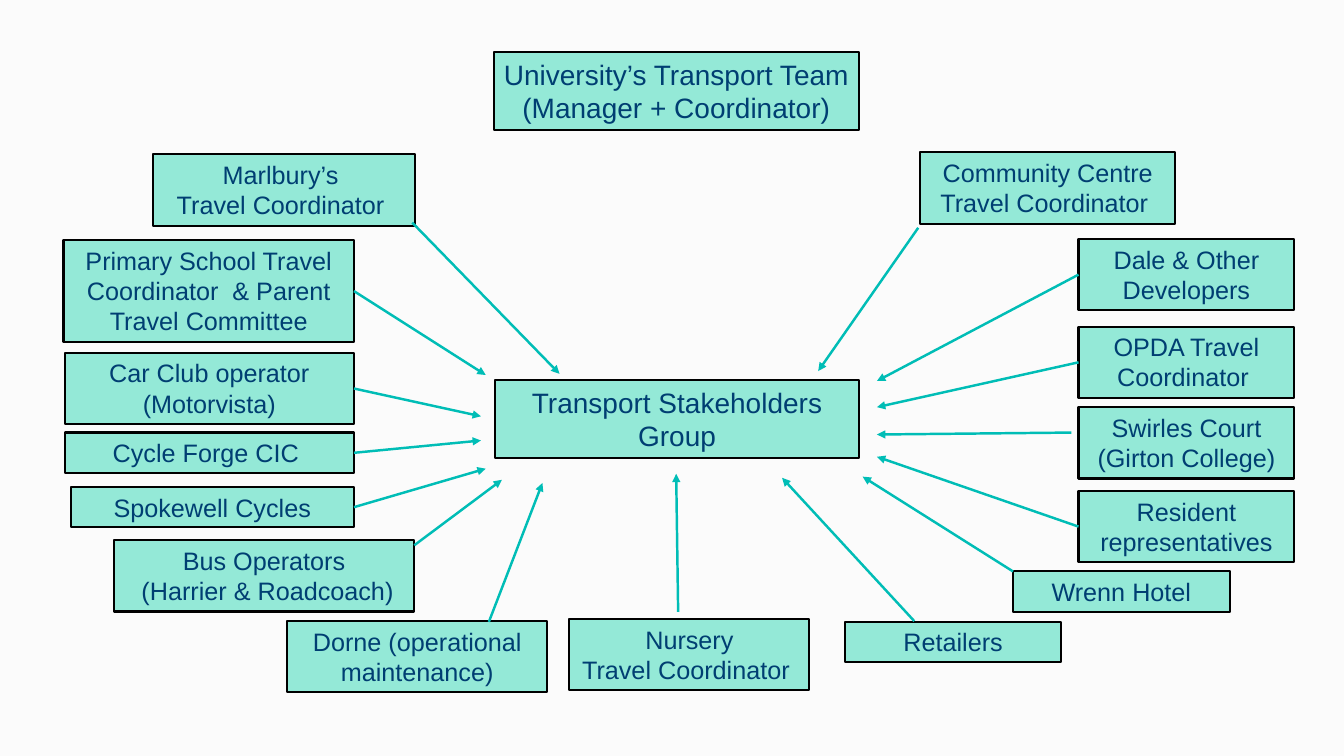
"""Build the transport stakeholders slide."""
from dataclasses import dataclass
from typing import Optional, Union

from lxml.etree import SubElement
from pptx import Presentation
from pptx.dml.color import RGBColor
from pptx.enum.shapes import MSO_CONNECTOR as Connector, MSO_SHAPE as Preset
from pptx.enum.text import MSO_ANCHOR as Anchor, MSO_AUTO_SIZE as AutoSize, PP_ALIGN as Align
from pptx.oxml.ns import qn
from pptx.shapes.autoshape import Shape
from pptx.slide import Slide
from pptx.util import Cm, Pt

PALE_GREY = RGBColor(0xFB, 0xFB, 0xFB)
MINT = RGBColor(0x94, 0xE9, 0xD7)
BLACK = RGBColor(0x00, 0x00, 0x00)
NAVY = RGBColor(0x00, 0x3E, 0x72)
TEAL = RGBColor(0x00, 0xBD, 0xB6)

FONT = "Arial"
SIDE_MARGIN = Cm(0.15)
ONE_LINE, TWO_LINES, THREE_LINES = 1.02, 1.8, 2.57
LEFT_SIDE, RIGHT_SIDE = 1, 3
DEVELOPER_LEFT, DEVELOPER_WIDTH = 27.18, 5.44
OPERATOR_LEFT, OPERATOR_WIDTH = 1.63, 7.29

Point = tuple[float, float]


@dataclass(frozen=True)
class Arrow:
    """An arrow from a side of its box, or from a point, to a point."""
    start: Union[int, Point]
    end: Point


@dataclass(frozen=True)
class Box:
    """A labelled box with its arrow, in centimetres."""
    text: str
    left: float
    top: float
    width: float
    height: float
    arrow: Optional[Arrow] = None
    size: int = 18


BOXES = [
    Box("University’s Transport Team (Manager + Coordinator)", 12.45, 1.32, 9.19, 1.96, size=20),
    Box("Transport Stakeholders Group", 12.47, 9.58, 9.19, 1.96, size=20),
    Box("Marlbury’s \nTravel Coordinator ", 3.86, 3.89, 6.6, TWO_LINES,
        Arrow((10.39, 5.61), (14.1, 9.42))),
    Box("Primary School Travel Coordinator  & Parent Travel Committee", 1.6, 6.05, 7.32,
        THREE_LINES, Arrow(RIGHT_SIDE, (12.24, 9.45))),
    Box("Car Club operator (Motorvista)", OPERATOR_LEFT, 8.89, OPERATOR_WIDTH, TWO_LINES,
        Arrow(RIGHT_SIDE, (12.12, 10.49))),
    Box("Cycle Forge CIC ", OPERATOR_LEFT, 10.9, OPERATOR_WIDTH, ONE_LINE,
        Arrow(RIGHT_SIDE, (12.12, 11.1))),
    Box("Spokewell Cycles", 1.78, 12.27, 7.14, ONE_LINE, Arrow(RIGHT_SIDE, (12.24, 11.81))),
    Box("Bus Operators\n (Harrier & Roadcoach)", 2.87, 13.61, 7.57, TWO_LINES,
        Arrow((10.44, 13.74), (12.65, 12.09))),
    Box("Dorne (operational maintenance)", 7.24, 15.65, 6.55, TWO_LINES,
        Arrow((12.32, 15.67), (13.67, 12.17))),
    Box("Nursery\nTravel Coordinator ", 14.35, 15.6, 6.05, TWO_LINES,
        Arrow((17.09, 15.42), (17.04, 11.94))),
    Box("Retailers", 21.29, 15.67, 5.46, ONE_LINE, Arrow((23.04, 15.65), (19.71, 12.04))),
    Box("Wrenn Hotel", 25.53, 14.4, 5.46, ONE_LINE, Arrow((25.53, 14.4), (21.74, 12.01))),
    Box("Resident representatives", DEVELOPER_LEFT, 12.37, DEVELOPER_WIDTH, TWO_LINES,
        Arrow(LEFT_SIDE, (22.1, 11.51))),
    Box("Swirles Court (Girton College)", DEVELOPER_LEFT, 10.26, DEVELOPER_WIDTH, TWO_LINES,
        Arrow((27, 10.9), (22.1, 10.95))),
    Box("OPDA Travel Coordinator ", DEVELOPER_LEFT, 8.23, DEVELOPER_WIDTH, TWO_LINES,
        Arrow(LEFT_SIDE, (22.1, 10.26))),
    Box("Dale & Other Developers", DEVELOPER_LEFT, 6.02, DEVELOPER_WIDTH, TWO_LINES,
        Arrow(LEFT_SIDE, (22.1, 9.6))),
    Box("Community Centre Travel Coordinator ", 23.19, 3.84, 6.43, TWO_LINES,
        Arrow((23.14, 5.74), (20.62, 9.35))),
]


def draw_box(page: Slide, box: Box) -> Shape:
    """Draw one labelled box."""
    shape = page.shapes.add_shape(
        Preset.RECTANGLE, Cm(box.left), Cm(box.top), Cm(box.width), Cm(box.height))
    shape.shadow.inherit = False
    shape.fill.solid()
    shape.fill.fore_color.rgb = MINT
    shape.line.color.rgb = BLACK
    shape.line.width = Pt(1.5)
    frame = shape.text_frame
    frame.word_wrap = True
    frame.auto_size = AutoSize.SHAPE_TO_FIT_TEXT
    frame.vertical_anchor = Anchor.TOP
    frame.margin_left = frame.margin_right = SIDE_MARGIN
    for number, line in enumerate(box.text.split("\n")):
        para = frame.add_paragraph() if number else frame.paragraphs[0]
        para.alignment = Align.CENTER
        span = para.add_run()
        span.text = line
        span.font.name = FONT
        span.font.size = Pt(box.size)
        span.font.color.rgb = NAVY
    return shape


def draw_arrow(page: Slide, arrow: Arrow, shape: Shape) -> None:
    """Draw the arrow that leaves a box."""
    joined = isinstance(arrow.start, int)
    start = arrow.end if joined else arrow.start
    connector = page.shapes.add_connector(
        Connector.STRAIGHT, *(Cm(length) for length in (*start, *arrow.end)))
    if joined:
        connector.begin_connect(shape, arrow.start)
    connector.line.color.rgb = TEAL
    connector.line.width = Pt(1.75)
    SubElement(connector.line._get_or_add_ln(), qn("a:tailEnd"), type="triangle")
    SubElement(connector._element.spPr, qn("a:effectLst"))


def main() -> None:
    """Build and save the deck."""
    deck = Presentation()
    deck.slide_width, deck.slide_height = Cm(33.87), Cm(19.05)
    page = deck.slides.add_slide(deck.slide_layouts[6])
    page.background.fill.solid()
    page.background.fill.fore_color.rgb = PALE_GREY
    shapes = [draw_box(page, box) for box in BOXES]
    for box, shape in zip(BOXES, shapes):
        if box.arrow:
            draw_arrow(page, box.arrow, shape)
    deck.save("out.pptx")


if __name__ == "__main__":
    main()
